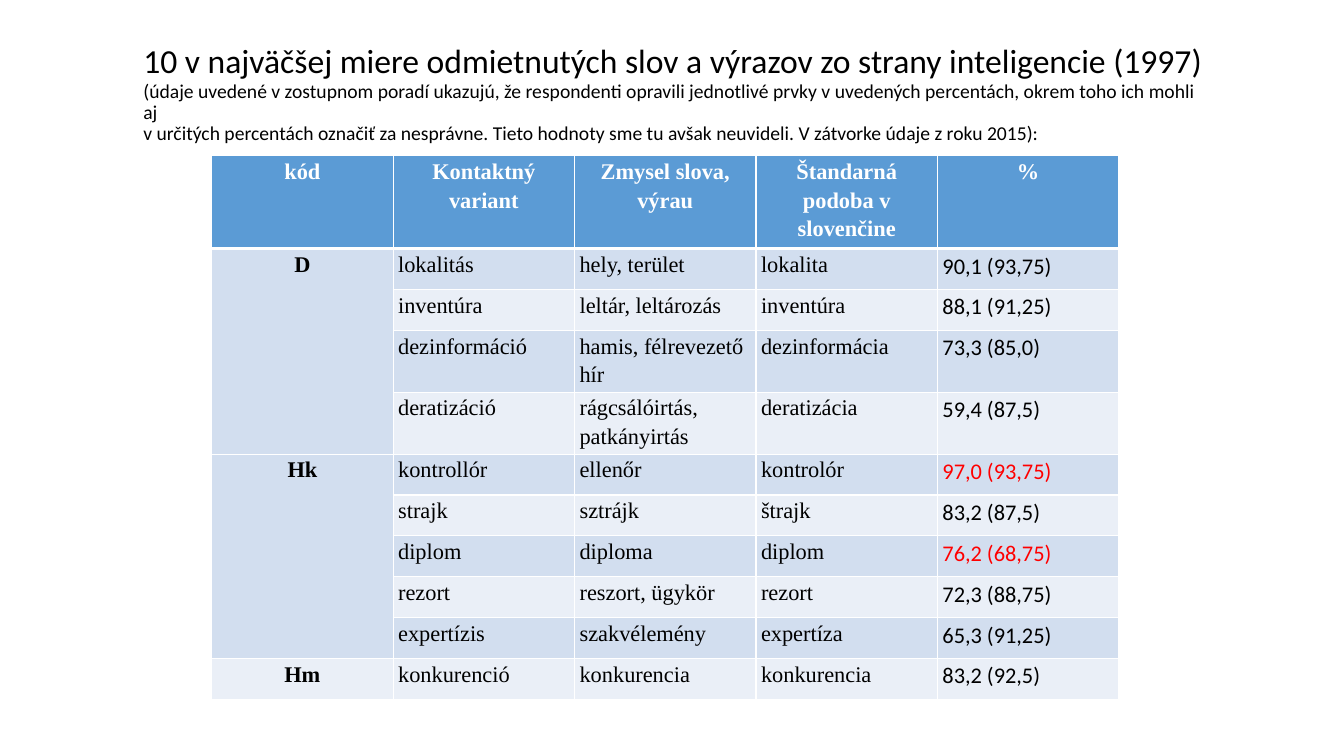
import pptx
import pptx.dml.color
import pptx.enum.text
import pptx.oxml
import pptx.oxml.ns
import pptx.util

Pt = pptx.util.Pt
PP_ALIGN = pptx.enum.text.PP_ALIGN

COLORS = {
    "text": "000000",
    "highlight": "FF0000",
    "header": "5B9BD5",
    "band_dark": "D2DEEF",
    "band_light": "EAEFF7",
    "white": "FFFFFF",
}
BODY_FONT = "Calibri"
TABLE_FONT = "Times New Roman"

TITLE = "10 v najväčšej miere odmietnutých slov a výrazov zo strany inteligencie (1997)"
SUBTITLE = (
    "(údaje uvedené v zostupnom poradí ukazujú, že respondenti opravili jednotlivé prvky "
    "v uvedených percentách, okrem toho ich mohli aj \v"
    "v určitých percentách označiť za nesprávne. Tieto hodnoty sme tu avšak neuvideli. "
    "V zátvorke údaje z roku 2015):"
)
HEADERS = ["kód", "Kontaktný variant", "Zmysel slova, výrau",
           "Štandarná podoba v slovenčine", "%"]
GROUPS = {
    "D": [
        ("lokalitás", "hely, terület", "lokalita", "90,1 (93,75)"),
        ("inventúra", "leltár, leltározás", "inventúra", "88,1 (91,25)"),
        ("dezinformáció", "hamis, félrevezető hír", "dezinformácia", "73,3 (85,0)"),
        ("deratizáció", "rágcsálóirtás, patkányirtás", "deratizácia", "59,4 (87,5)"),
    ],
    "Hk": [
        ("kontrollór", "ellenőr", "kontrolór", "97,0 (93,75)"),
        ("strajk", "sztrájk", "štrajk", "83,2 (87,5)"),
        ("diplom", "diploma", "diplom", "76,2 (68,75)"),
        ("rezort", "reszort, ügykör", "rezort", "72,3 (88,75)"),
        ("expertízis", "szakvélemény", "expertíza", "65,3 (91,25)"),
    ],
    "Hm": [("konkurenció", "konkurencia", "konkurencia", "83,2 (92,5)")],
}
HIGHLIGHTED = {"97,0 (93,75)", "76,2 (68,75)"}
TWO_LINE_WORDS = {"dezinformáció", "deratizáció"}
HEADER_HEIGHT, ROW_HEIGHT, TWO_LINE_HEIGHT = 66.4, 29.2, 44.2


def rgb(name):
    return pptx.dml.color.RGBColor.from_string(COLORS[name])


def format_run(run, size, font, color, bold=False):
    run.font.size = Pt(size)
    run.font.name = font
    run.font.bold = bold
    run.font.color.rgb = rgb(color)


def add_heading(slide, left, top, width, height):
    box = slide.shapes.add_textbox(Pt(left), Pt(top), Pt(width), Pt(height))
    frame = box.text_frame
    frame.word_wrap = True
    frame.vertical_anchor = pptx.enum.text.MSO_ANCHOR.MIDDLE
    frame.text = f"{TITLE}\v{SUBTITLE}"
    paragraph = frame.paragraphs[0]
    paragraph.line_spacing = 0.9
    for index, run in enumerate(paragraph.runs):
        format_run(run, 14 if index else 24, BODY_FONT, "text")
    title_break = paragraph.runs[0]._r.getnext()
    title_break.append(pptx.oxml.parse_xml(
        f'<a:rPr {pptx.oxml.ns.nsdecls("a")} sz="2400"/>'))


def add_borders(cell, bottom_width):
    properties = cell._tc.get_or_add_tcPr()
    for side, width in (("L", 1), ("R", 1), ("T", 1), ("B", bottom_width)):
        properties.append(pptx.oxml.parse_xml(
            f'<a:ln{side} {pptx.oxml.ns.nsdecls("a")} w="{Pt(width)}"><a:solidFill>'
            f'<a:srgbClr val="{COLORS["white"]}"/></a:solidFill></a:ln{side}>'))


def fill_cell(cell, text, fill, color="text", font=TABLE_FONT, heading=False, bottom_width=1):
    cell.margin_left = cell.margin_right = Pt(3.6)
    cell.margin_top = cell.margin_bottom = 0
    add_borders(cell, bottom_width)
    cell.fill.solid()
    cell.fill.fore_color.rgb = rgb(fill)
    cell.text = text
    paragraph = cell.text_frame.paragraphs[0]
    paragraph.line_spacing = 1.15
    paragraph.alignment = PP_ALIGN.CENTER if heading else PP_ALIGN.LEFT
    for run in paragraph.runs:
        format_run(run, 16, font, color, heading)


def add_word_table(slide, left, top, width):
    """Place the table; each code in the first column spans its group of rows."""
    words = [row for rows in GROUPS.values() for row in rows]
    heights = [HEADER_HEIGHT] + [
        TWO_LINE_HEIGHT if row[0] in TWO_LINE_WORDS else ROW_HEIGHT for row in words]
    table = slide.shapes.add_table(len(heights), len(HEADERS), Pt(left), Pt(top),
                                   Pt(width), Pt(sum(heights))).table
    for column in table.columns:
        column.width = Pt(width / len(HEADERS))
    for row, height in zip(table.rows, heights):
        row.height = Pt(height)

    for index, header in enumerate(HEADERS):
        fill_cell(table.cell(0, index), header, "header", "white",
                  heading=True, bottom_width=3)

    row_index = 1
    for code, rows in GROUPS.items():
        first_row = row_index
        group_fill = "band_dark" if first_row % 2 else "band_light"
        for values in rows:
            fill = "band_dark" if row_index % 2 else "band_light"
            fill_cell(table.cell(row_index, 0), code if row_index == first_row else "",
                      group_fill, heading=True)
            for index, value in enumerate(values, start=1):
                is_percent = index == len(values)
                fill_cell(table.cell(row_index, index), value, fill,
                          "highlight" if value in HIGHLIGHTED else "text",
                          BODY_FONT if is_percent else TABLE_FONT)
            row_index += 1
        if len(rows) > 1:
            table.cell(first_row, 0).merge(table.cell(row_index - 1, 0))


def main():
    presentation = pptx.Presentation()
    presentation.slide_width, presentation.slide_height = Pt(960), Pt(540)
    slide = presentation.slides.add_slide(presentation.slide_layouts[6])
    add_heading(slide, 95.3, 34.6, 779, 66.2)
    add_word_table(slide, 151.2, 111.2, 648)
    presentation.save("out.pptx")


if __name__ == "__main__":
    main()
